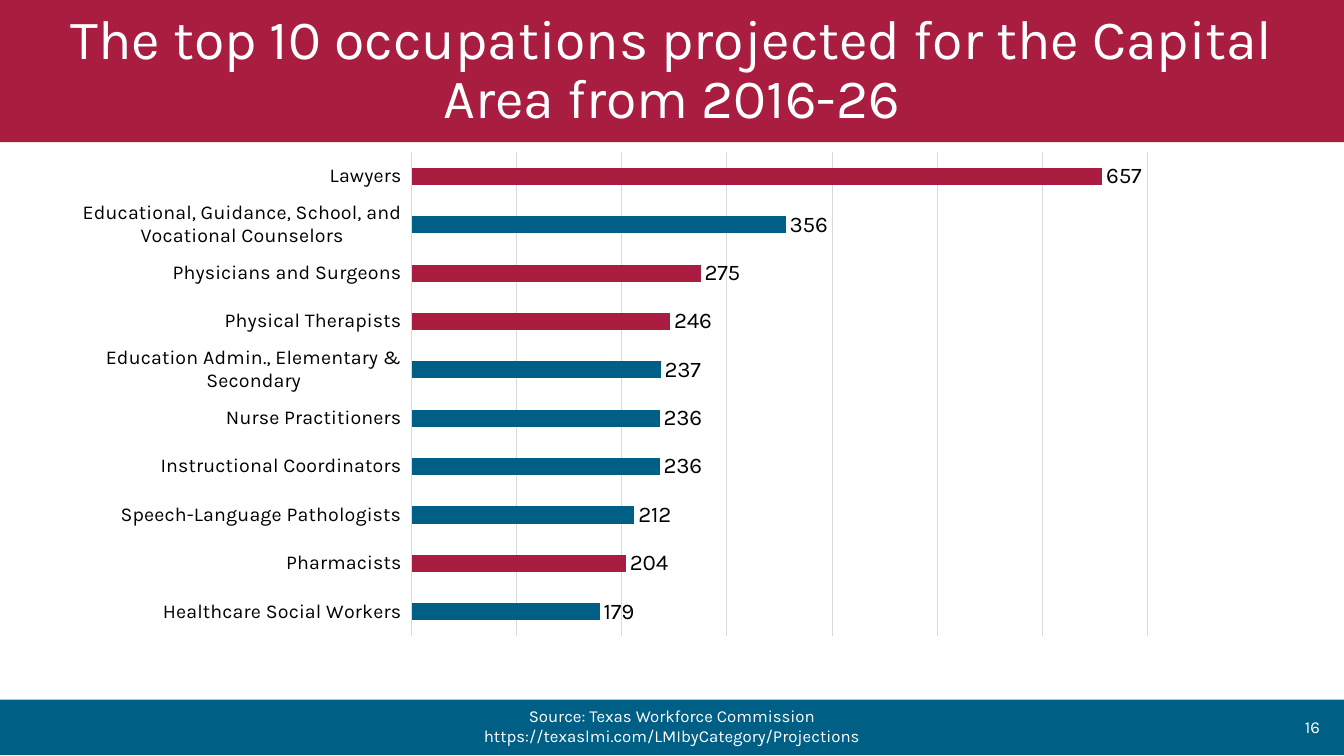
from dataclasses import dataclass

from pptx import Presentation
from pptx.chart.data import CategoryChartData
from pptx.dml.color import RGBColor
from pptx.enum.chart import XL_CHART_TYPE, XL_LABEL_POSITION, XL_TICK_LABEL_POSITION, XL_TICK_MARK
from pptx.enum.shapes import MSO_SHAPE
from pptx.enum.text import MSO_ANCHOR, MSO_AUTO_SIZE, PP_ALIGN
from pptx.util import Inches, Pt

BARS = XL_CHART_TYPE.BAR_CLUSTERED
OUTSIDE_END = XL_LABEL_POSITION.OUTSIDE_END
LOW = XL_TICK_LABEL_POSITION.LOW
NO_TICK = XL_TICK_MARK.NONE
RECTANGLE = MSO_SHAPE.RECTANGLE
MIDDLE = MSO_ANCHOR.MIDDLE
NO_FIT = MSO_AUTO_SIZE.NONE
CENTER, RIGHT = PP_ALIGN.CENTER, PP_ALIGN.RIGHT


@dataclass(frozen=True)
class Theme:
    font: str = "Karla"
    crimson: RGBColor = RGBColor(0xA8, 0x1D, 0x40)
    blue: RGBColor = RGBColor(0x00, 0x5F, 0x84)
    white: RGBColor = RGBColor(0xFF, 0xFF, 0xFF)
    black: RGBColor = RGBColor(0x00, 0x00, 0x00)
    grid: RGBColor = RGBColor(0xD9, 0xD9, 0xD9)
    title_size: float = 39.6
    value_size: int = 16
    category_size: int = 14
    footer_size: int = 12


theme = Theme()

occupations = [
    ("Healthcare Social Workers", 179, theme.blue),
    ("Pharmacists", 204, theme.crimson),
    ("Speech-Language Pathologists", 212, theme.blue),
    ("Instructional Coordinators", 236, theme.blue),
    ("Nurse Practitioners", 236, theme.blue),
    ("Education Admin., Elementary & Secondary", 237, theme.blue),
    ("Physical Therapists", 246, theme.crimson),
    ("Physicians and Surgeons", 275, theme.crimson),
    ("Educational, Guidance, School, and Vocational Counselors", 356, theme.blue),
    ("Lawyers", 657, theme.crimson),
]


def style_font(font, size, color):
    font.name = theme.font
    font.size = Pt(size)
    font.bold = False
    font.color.rgb = color


def write_text(frame, text, size, align):
    frame.word_wrap = True
    frame.auto_size = NO_FIT
    frame.vertical_anchor = MIDDLE
    paragraph = frame.paragraphs[0]
    paragraph.alignment = align
    run = paragraph.add_run()
    run.text = text
    style_font(run.font, size, theme.white)
    return paragraph


deck = Presentation()
deck.slide_width, deck.slide_height = Inches(13.33), Inches(7.5)
slide = deck.slides.add_slide(deck.slide_layouts[5])

footer_band = slide.shapes.add_shape(RECTANGLE, 0, Inches(6.94), deck.slide_width, Inches(0.55))
footer_band.shadow.inherit = False
footer_band.fill.solid()
footer_band.fill.fore_color.rgb = theme.blue
footer_band.line.fill.background()

title = slide.shapes.title
title.left, title.top, title.width, title.height = 0, 0, deck.slide_width, Inches(1.41)
title.fill.solid()
title.fill.fore_color.rgb = theme.crimson
headline = write_text(
    title.text_frame,
    "The top 10 occupations projected for the Capital Area from 2016-26",
    theme.title_size,
    CENTER,
)
headline.line_spacing = 0.9

footers = [
    (3.85, 7.0, 5.63, CENTER,
     "Source: Texas Workforce Commission https://texaslmi.com/LMIbyCategory/Projections"),
    (10.19, 7.01, 3, RIGHT, "16"),
]
for left, top, width, align, text in footers:
    footer = slide.shapes.add_textbox(Inches(left), Inches(top), Inches(width), Inches(0.4))
    write_text(footer.text_frame, text, theme.footer_size, align)

projections = CategoryChartData(number_format="###,##0")
projections.categories = [name for name, openings, color in occupations]
projections.add_series("Series 1", [openings for name, openings, color in occupations])
chart = slide.shapes.add_chart(
    BARS, Inches(0.6), Inches(1.41), Inches(11), Inches(5), projections
).chart
chart.has_legend = False
chart.has_title = False
style_font(chart.font, theme.value_size, theme.black)

occupation_axis = chart.category_axis
occupation_axis.major_tick_mark = NO_TICK
occupation_axis.minor_tick_mark = NO_TICK
occupation_axis.tick_label_position = LOW
occupation_axis.has_major_gridlines = False
style_font(occupation_axis.tick_labels.font, theme.category_size, theme.black)

openings_axis = chart.value_axis
openings_axis.visible = False
openings_axis.minimum_scale = 0
openings_axis.maximum_scale = 700
openings_axis.major_unit = 100
openings_axis.has_major_gridlines = True
for line in (occupation_axis.format.line, openings_axis.major_gridlines.format.line):
    line.color.rgb = theme.grid
    line.width = Pt(0.75)

plot = chart.plots[0]
plot.gap_width = 182
plot.vary_by_categories = False
bars = plot.series[0]
bars.format.fill.solid()
bars.format.fill.fore_color.rgb = theme.blue
for index, (name, openings, color) in enumerate(occupations):
    if color != theme.blue:
        bar_fill = bars.points[index].format.fill
        bar_fill.solid()
        bar_fill.fore_color.rgb = color

labels = bars.data_labels
labels.show_value = True
labels.number_format = "###,##0"
labels.number_format_is_linked = False
labels.position = OUTSIDE_END
style_font(labels.font, theme.value_size, theme.black)

deck.save("out.pptx")
